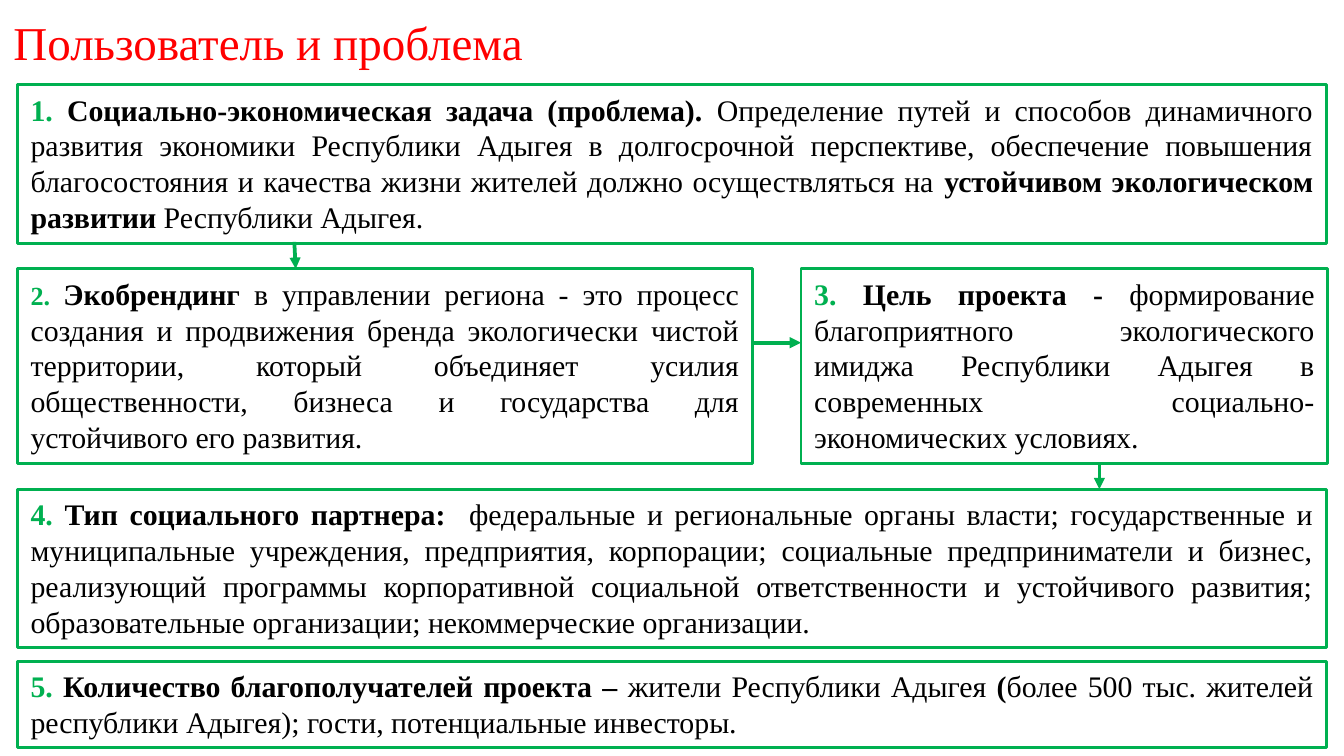
from lxml.etree import SubElement
from pptx import Presentation
from pptx.dml.color import RGBColor
from pptx.enum.shapes import MSO_CONNECTOR, MSO_SHAPE
from pptx.enum.text import MSO_ANCHOR, PP_ALIGN
from pptx.oxml.ns import qn
from pptx.util import Inches, Pt

GREEN, RED, BLACK = "00B050", "FF0000", "000000"
FONT = "Times New Roman"
TITLE = "Пользователь и проблема"
LEFT, WIDE = 0.13, 9.74
BOXES = [
    ((LEFT, 0.63, WIDE, 1.18), 16, [
        ("1. ", GREEN, True),
        ("Социально-экономическая задача (проблема). ", BLACK, True),
        ("Определение путей и способов динамичного развития экономики Республики Адыгея "
         "в долгосрочной перспективе, обеспечение повышения благосостояния и качества "
         "жизни жителей должно осуществляться на ", BLACK, False),
        ("устойчивом экологическом развитии", BLACK, True),
        (" Республики Адыгея.", BLACK, False)]),
    ((LEFT, 2, 5.47, 1.45), 14, [
        ("2. ", GREEN, True),
        ("Экобрендинг ", BLACK, True),
        ("в управлении региона - это процесс создания и продвижения бренда экологически "
         "чистой территории, который объединяет усилия общественности, бизнеса и "
         "государства для устойчивого его развития. ", BLACK, False)]),
    ((5.96, 2, 3.92, 1.45), 16, [
        ("3. ", GREEN, True),
        ("Цель проекта - ", BLACK, True),
        ("формирование благоприятного экологического имиджа Республики Адыгея в "
         "современных социально-экономических условиях.", BLACK, False)]),
    ((LEFT, 3.64, WIDE, 1.18), 16, [
        ("4. ", GREEN, True),
        ("Тип социального партнера:  ", BLACK, True),
        ("федеральные и региональные органы власти; государственные и муниципальные "
         "учреждения, предприятия, корпорации; социальные предприниматели и бизнес, "
         "реализующий программы корпоративной социальной ответственности и устойчивого "
         "развития; образовательные организации; некоммерческие организации.",
         BLACK, False)]),
    ((LEFT, 4.92, WIDE, 0.64), 16, [
        ("5. ", GREEN, True),
        ("Количество благополучателей проекта – ", BLACK, True),
        ("жители Республики Адыгея", BLACK, False),
        (" (", BLACK, True),
        ("более 500 тыс. жителей республики Адыгея); гости, потенциальные инвесторы.",
         BLACK, False)]),
]
ARROWS = [(2.19, 1.8, 2.2, 2), (5.61, 2.55, 5.96, 2.55), (8.18, 3.46, 8.18, 3.64)]


def paint(target, color):
    target.rgb = RGBColor.from_string(color)


def write(para, text, size=16, color=BLACK, bold=False):
    run = para.add_run()
    run.text = text
    run.font.name, run.font.size, run.font.bold = FONT, Pt(size), bold
    paint(run.font.color, color)


def add_box(slide, place, lead, runs):
    box = slide.shapes.add_shape(MSO_SHAPE.RECTANGLE, *map(Inches, place))
    box.shadow.inherit = False
    box.fill.background()
    paint(box.line.color, GREEN)
    box.line.width = Pt(1.5)
    frame = box.text_frame
    frame.word_wrap = True
    frame.vertical_anchor = MSO_ANCHOR.TOP
    para = frame.paragraphs[0]
    para.alignment = PP_ALIGN.JUSTIFY
    for text, color, bold in runs:
        write(para, text, size=lead if color == GREEN else 16, color=color, bold=bold)


def add_arrow(slide, ends):
    arrow = slide.shapes.add_connector(MSO_CONNECTOR.STRAIGHT, *map(Inches, ends))
    paint(arrow.line.color, GREEN)
    arrow.line.width = Pt(2)
    props = arrow.element.spPr
    SubElement(props.find(qn("a:ln")), qn("a:tailEnd"), type="triangle")
    SubElement(props, qn("a:effectLst"))


def main():
    """Build the slide on the user and the problem."""
    deck = Presentation()
    deck.slide_width, deck.slide_height = Inches(10), Inches(10 * 9 / 16)
    slide = deck.slides.add_slide(deck.slide_layouts[5])
    title = slide.shapes.title
    title.left, title.top, title.width, title.height = map(Inches, (0, 0, 9.32, 0.63))
    frame = title.text_frame
    frame.margin_left = frame.margin_right = Inches(0.1)
    frame.margin_top = frame.margin_bottom = Inches(0.1)
    frame.vertical_anchor = MSO_ANCHOR.TOP
    para = frame.paragraphs[0]
    para.alignment = PP_ALIGN.LEFT
    write(para, TITLE, size=25.2, color=RED)
    for place, lead, runs in BOXES:
        add_box(slide, place, lead, runs)
    for ends in ARROWS:
        add_arrow(slide, ends)
    deck.save("out.pptx")


if __name__ == "__main__":
    main()
